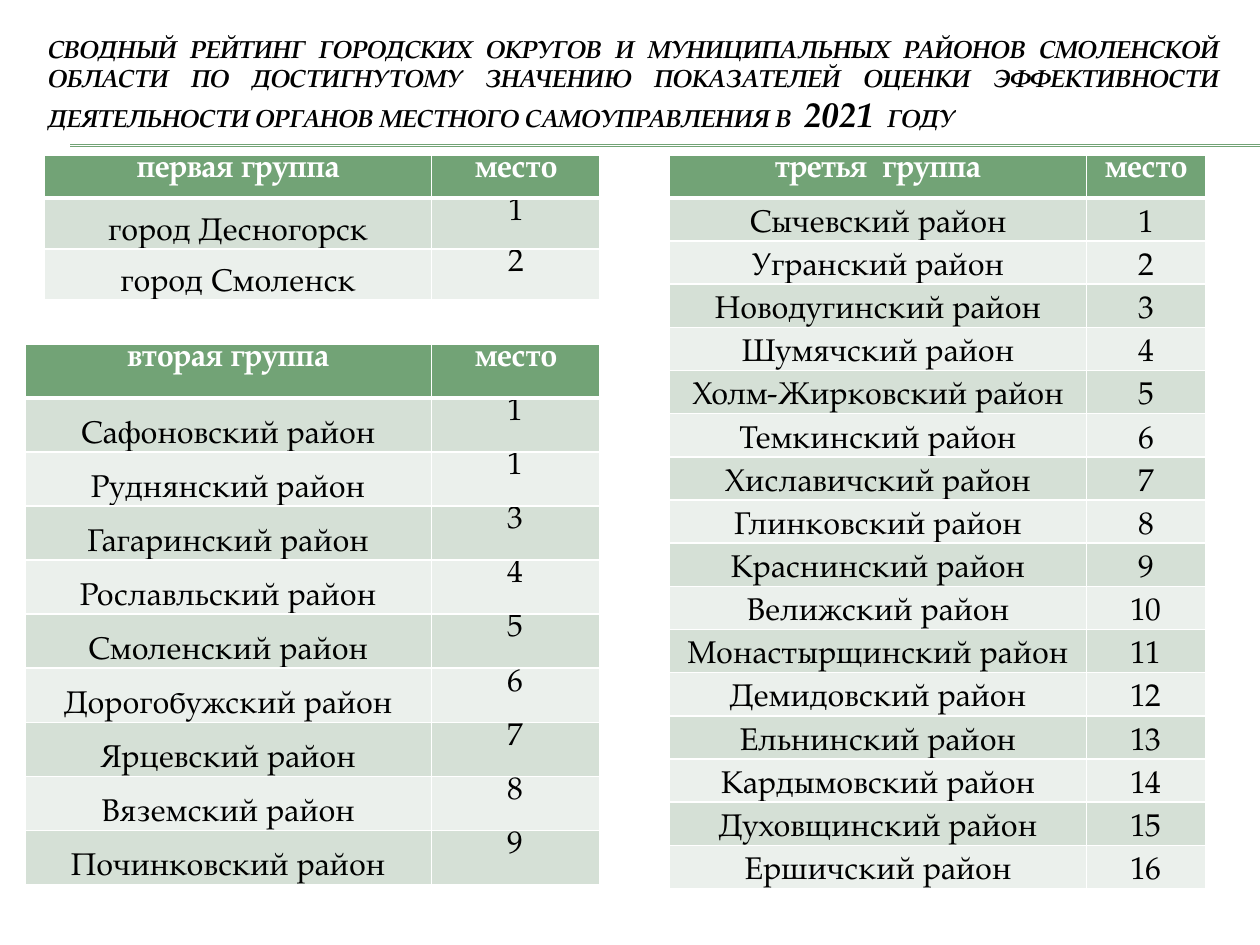
from dataclasses import dataclass

from lxml import etree
from pptx import Presentation
from pptx.dml.color import RGBColor
from pptx.enum.shapes import MSO_CONNECTOR
from pptx.enum.text import MSO_ANCHOR, MSO_AUTO_SIZE, PP_ALIGN
from pptx.oxml.ns import qn
from pptx.util import Cm, Pt

STRAIGHT = MSO_CONNECTOR.STRAIGHT
TOP, MIDDLE, BOTTOM = MSO_ANCHOR.TOP, MSO_ANCHOR.MIDDLE, MSO_ANCHOR.BOTTOM
CENTER, JUSTIFY = PP_ALIGN.CENTER, PP_ALIGN.JUSTIFY
FIXED_SIZE = MSO_AUTO_SIZE.NONE


@dataclass(frozen=True)
class Theme:
    font: str = "TeX Gyre Pagella"
    green: str = "72A376"
    odd_row: str = "D5E0D6"
    even_row: str = "EBF0EC"
    white: str = "FFFFFF"
    black: str = "000000"
    title_size: int = 14
    year_size: int = 20
    table_size: int = 18


def add_text(para, text, *, font, size, color, bold=False, italic=False):
    span = para.add_run()
    span.text = text
    span.font.name = font
    span.font.size = Pt(size)
    span.font.bold = bold
    span.font.italic = italic
    span.font.color.rgb = RGBColor.from_string(color)


class RatingPage:
    def __init__(self, page, theme):
        self.page = page
        self.theme = theme

    def title(self, spans, left, top, width, height):
        box = self.page.shapes.title
        box.left, box.top, box.width, box.height = map(Cm, (left, top, width, height))
        frame = box.text_frame
        frame.word_wrap = True
        frame.auto_size = FIXED_SIZE
        frame.vertical_anchor = MIDDLE
        para = frame.paragraphs[0]
        para.alignment = JUSTIFY
        for text, size in spans:
            add_text(para, text, font=self.theme.font, size=size,
                     color=self.theme.black, bold=True, italic=True)

    def rule(self, left, right, top):
        line = self.page.shapes.add_connector(STRAIGHT, Cm(left), Cm(top), Cm(right), Cm(top))
        line.line.color.rgb = RGBColor.from_string(self.theme.green)
        line.line.width = Pt(0.75)
        etree.SubElement(line._element.spPr, qn("a:effectLst"))

    def borders(self, cell, bottom):
        props = cell._tc.get_or_add_tcPr()
        for side, width in (("lnL", 1), ("lnR", 1), ("lnT", 1), ("lnB", bottom)):
            edge = etree.SubElement(props, qn(f"a:{side}"), w=str(Pt(width)))
            fill = etree.SubElement(edge, qn("a:solidFill"))
            etree.SubElement(fill, qn("a:srgbClr"), val=self.theme.white)

    def cell(self, cell, text, fill, color, *, anchor, header):
        self.borders(cell, bottom=3 if header else 1)
        cell.fill.solid()
        cell.fill.fore_color.rgb = RGBColor.from_string(fill)
        cell.vertical_anchor = anchor
        cell.margin_left = cell.margin_right = Cm(0.03)
        cell.margin_top = cell.margin_bottom = 0
        para = cell.text_frame.paragraphs[0]
        para.alignment = CENTER
        add_text(para, text, font=self.theme.font, size=self.theme.table_size,
                 color=color, bold=header)

    def rating(self, heading, entries, *, right, top, widths, header_height,
               row_height, place_anchor):
        theme = self.theme
        rows = [(heading, "место"), *entries]
        heights = [header_height] + [row_height] * len(entries)
        frame = self.page.shapes.add_table(
            len(rows), 2, Cm(right - sum(widths)), Cm(top), Cm(sum(widths)), Cm(sum(heights)))
        table = frame.table
        for column, width in zip(table.columns, widths):
            column.width = Cm(width)
        for index, (values, height) in enumerate(zip(rows, heights)):
            table.rows[index].height = Cm(height)
            header = index == 0
            band = theme.odd_row if index % 2 else theme.even_row
            anchors = (TOP, TOP) if header else (BOTTOM, place_anchor)
            for column, (value, anchor) in enumerate(zip(values, anchors)):
                self.cell(table.cell(index, column), str(value),
                          theme.green if header else band,
                          theme.white if header else theme.black,
                          anchor=anchor, header=header)


def districts(names, places):
    return [(f"{name} район", place) for name, place in zip(names, places)]


CITIES = [("город Десногорск", 1), ("город Смоленск", 2)]
SECOND_GROUP = districts(
    ["Сафоновский", "Руднянский", "Гагаринский", "Рославльский", "Смоленский",
     "Дорогобужский", "Ярцевский", "Вяземский", "Починковский"],
    [1, 1, 3, 4, 5, 6, 7, 8, 9])
THIRD_GROUP = districts(
    ["Сычевский", "Угранский", "Новодугинский", "Шумячский", "Холм-Жирковский",
     "Темкинский", "Хиславичский", "Глинковский", "Краснинский", "Велижский",
     "Монастырщинский", "Демидовский", "Ельнинский", "Кардымовский",
     "Духовщинский", "Ершичский"],
    range(1, 17))


def main():
    deck = Presentation()
    deck.slide_width, deck.slide_height = Cm(25.4), Cm(19.05)
    theme = Theme()
    page = RatingPage(deck.slides.add_slide(deck.slide_layouts[5]), theme)

    # Double rule under the title
    for top in (2.92, 2.95):
        page.rule(1.42, 25.4, top)

    # Title
    page.title([
        ("СВОДНЫЙ РЕЙТИНГ ГОРОДСКИХ ОКРУГОВ И МУНИЦИПАЛЬНЫХ РАЙОНОВ СМОЛЕНСКОЙ ОБЛАСТИ "
         "ПО ДОСТИГНУТОМУ ЗНАЧЕНИЮ ПОКАЗАТЕЛЕЙ ОЦЕНКИ ЭФФЕКТИВНОСТИ ДЕЯТЕЛЬНОСТИ "
         "ОРГАНОВ МЕСТНОГО САМОУПРАВЛЕНИЯ В  ", theme.title_size),
        ("2021", theme.year_size),
        ("  ГОДУ", theme.title_size),
    ], 0.71, 0.53, 24.13, 2.34)

    # Right column: third group
    page.rating("третья  группа", THIRD_GROUP, right=24.3, top=3.13, widths=(8.4, 2.4),
                header_height=0.86, row_height=0.87, place_anchor=BOTTOM)

    # Left column: first and second groups
    page.rating("первая группа", CITIES, right=12.1, top=3.13, widths=(7.8, 3.4),
                header_height=0.86, row_height=1.03, place_anchor=TOP)
    page.rating("вторая группа", SECOND_GROUP, right=12.1, top=6.93, widths=(8.2, 3.4),
                header_height=1.09, row_height=1.09, place_anchor=TOP)

    deck.save("out.pptx")


if __name__ == "__main__":
    main()
